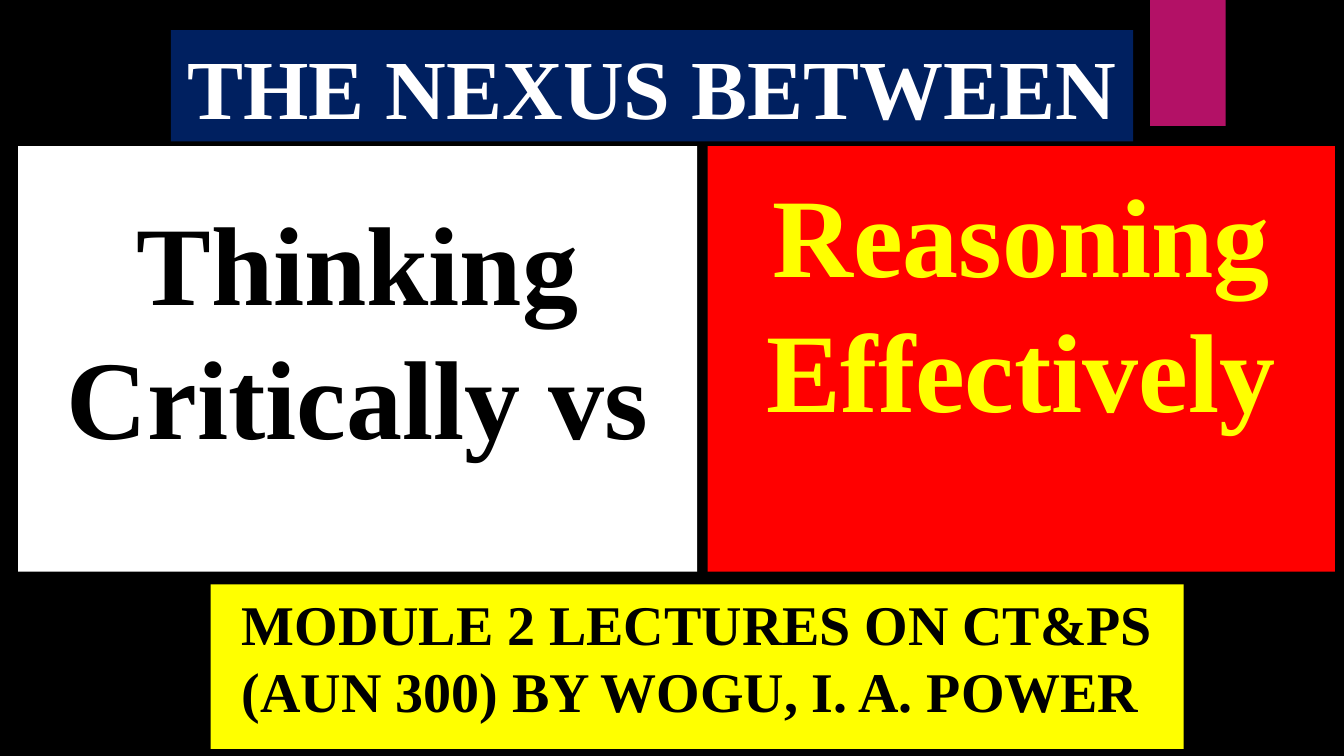
from pptx import Presentation
from pptx.dml.color import RGBColor
from pptx.enum.shapes import MSO_SHAPE as Shape
from pptx.enum.text import MSO_ANCHOR as Anchor, MSO_AUTO_SIZE as AutoSize, PP_ALIGN as Align
from pptx.util import Pt

BLACK = RGBColor(0, 0, 0)
WHITE = RGBColor(255, 255, 255)
YELLOW = RGBColor(255, 255, 0)
RED = RGBColor(255, 0, 0)
NAVY = RGBColor(0, 0x20, 0x60)
MAGENTA = RGBColor(0xB3, 0x11, 0x66)

SLIDE_SIZE = (960, 540)
ACCENT_BOX = (821.5, 0, 54, 90)
PANEL_TOP, PANEL_HEIGHT = 104.4, 304

# placeholder index (None for a plain box), text, box, top inset, size, text colour, fill
PANELS = [
    (0, "Thinking Critically vs", (13, PANEL_TOP, 485, PANEL_HEIGHT), 33.5, 80, BLACK, WHITE),
    (1, "MODULE 2 LECTURES ON CT&PS (AUN 300) BY WOGU, I. A. POWER ",
     (150.5, 417.5, 695, 117.5), 3.6, 40, BLACK, YELLOW),
    (None, "Reasoning Effectively", (505.5, PANEL_TOP, 448, PANEL_HEIGHT), 14, 80, YELLOW, RED),
    (None, "THE NEXUS BETWEEN", (122, 21.5, 687.5, 79.5), 3.6, 60, WHITE, NAVY),
]


def add_box(slide, box, fill):
    shape = slide.shapes.add_shape(Shape.RECTANGLE, *map(Pt, box))
    shape.shadow.inherit = False
    shape.line.fill.background()
    shape.fill.solid()
    shape.fill.fore_color.rgb = fill
    return shape


def place_placeholder(slide, index, box, fill):
    shape = slide.placeholders[index]
    shape.left, shape.top, shape.width, shape.height = map(Pt, box)
    shape.fill.solid()
    shape.fill.fore_color.rgb = fill
    return shape


def write_text(shape, text, top_inset, size, colour):
    frame = shape.text_frame
    frame.text = text
    frame_format = {"word_wrap": True, "auto_size": AutoSize.NONE,
                    "vertical_anchor": Anchor.TOP, "margin_top": Pt(top_inset)}
    for name, value in frame_format.items():
        setattr(frame, name, value)
    paragraph = frame.paragraphs[0]
    paragraph.alignment = Align.CENTER
    paragraph.space_before = Pt(0)
    font = paragraph.runs[0].font
    for name, value in {"name": "Times New Roman", "size": Pt(size), "bold": True}.items():
        setattr(font, name, value)
    font.color.rgb = colour


def main():
    presentation = Presentation()
    presentation.slide_width, presentation.slide_height = map(Pt, SLIDE_SIZE)
    slide = presentation.slides.add_slide(presentation.slide_layouts[0])
    slide.background.fill.solid()
    slide.background.fill.fore_color.rgb = BLACK

    add_box(slide, ACCENT_BOX, MAGENTA)
    for index, text, box, top_inset, size, colour, fill in PANELS:
        if index is None:
            shape = add_box(slide, box, fill)
        else:
            shape = place_placeholder(slide, index, box, fill)
        write_text(shape, text, top_inset, size, colour)
    presentation.save("out.pptx")


if __name__ == "__main__":
    main()
